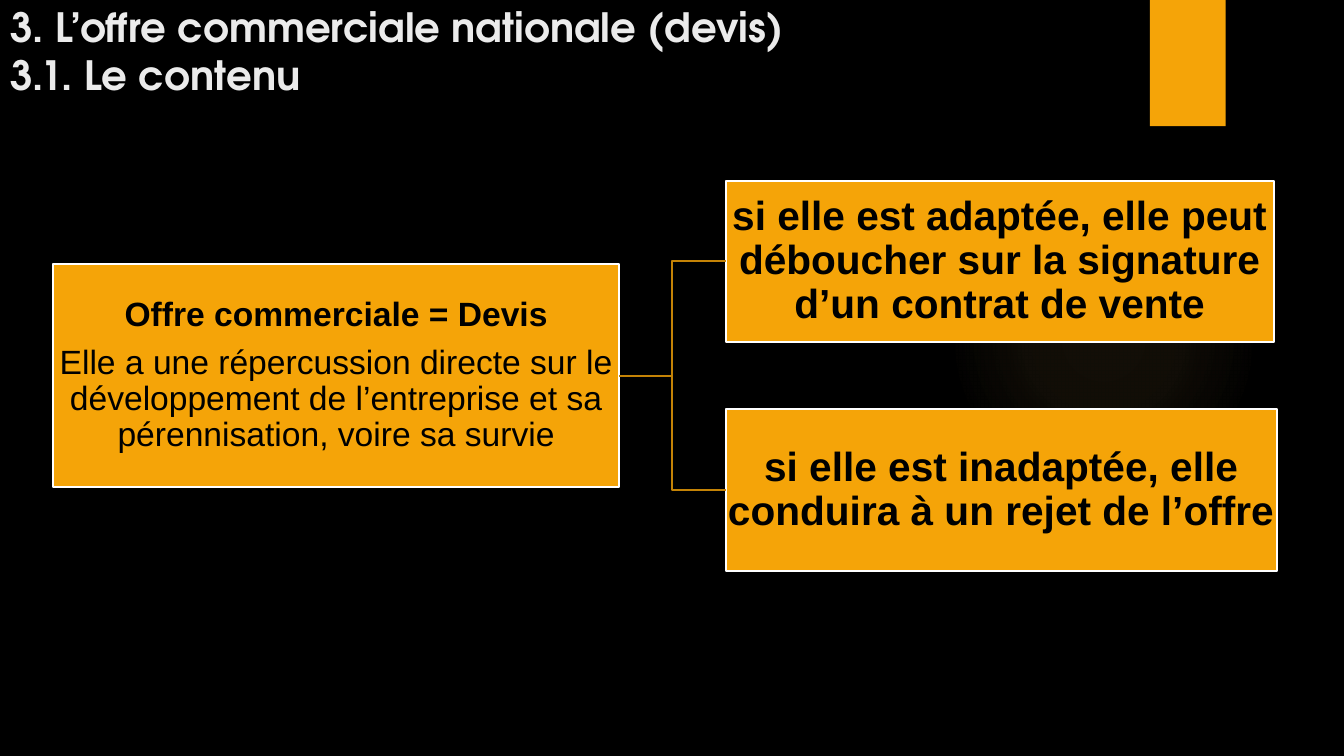
"""Builds the slide on the content of a national commercial offer."""
from lxml.etree import SubElement
from pptx import Presentation
from pptx.dml.color import RGBColor
from pptx.enum.shapes import MSO_CONNECTOR, MSO_SHAPE
from pptx.enum.text import MSO_ANCHOR, MSO_AUTO_SIZE, PP_ALIGN
from pptx.oxml import parse_xml
from pptx.oxml.ns import nsdecls, qn
from pptx.util import Cm, Pt

TITLE = "3. L’offre commerciale nationale (devis)\v3.1. Le contenu"
OFFER = [
    ("Offre commerciale = Devis", True),
    ("Elle a une répercussion directe sur le développement de l’entreprise "
     "et sa pérennisation, voire sa survie", False),
]
OUTCOMES = [
    ("si elle est adaptée, elle peut déboucher sur la signature d’un contrat de vente", 13.82),
    ("si elle est inadaptée, elle conduira à un rejet de l’offre", 13.89),
]
COLORS = {
    "background": "000000",
    "title": "EBEBEB",
    "accent": "F5A408",
    "glow": "FAC96A",
    "branch": "C48306",
    "border": "FFFFFF",
    "text": "000000",
}
GLOW_STOPS = [(0, 7), (36, 6), (69, 0)]
MIDDLE = 9.47
OFFER_LEFT, OFFER_WIDTH, OFFER_HEIGHT = 1.34, 14.26, 5.62
OUTCOME_LEFT, OUTCOME_HEIGHT, OUTCOME_PITCH = 18.29, 4.07, 5.76


def color(name):
    return RGBColor.from_string(COLORS[name])


def format_runs(paragraph, font_name, size, color_name, bold):
    for run in paragraph.runs:
        run.font.name = font_name
        run.font.size = Pt(size)
        run.font.bold = bold
        run.font.color.rgb = color(color_name)


def add_plain_shape(slide, kind, left, top, width, height):
    shape = slide.shapes.add_shape(kind, Cm(left), Cm(top), Cm(width), Cm(height))
    shape.shadow.inherit = False
    shape.fill.solid()
    shape.fill.fore_color.rgb = color("accent")
    shape.line.fill.background()
    return shape


def add_glow(slide):
    glow = add_plain_shape(slide, MSO_SHAPE.OVAL, 23.9, 4.65, 7.82, 7.82)
    stops = "".join(
        f'<a:gs pos="{position * 1000}"><a:srgbClr val="{COLORS["glow"]}">'
        f'<a:alpha val="{alpha * 1000}"/></a:srgbClr></a:gs>'
        for position, alpha in GLOW_STOPS
    )
    gradient = parse_xml(
        f'<a:gradFill {nsdecls("a")}><a:gsLst>{stops}</a:gsLst><a:path path="circle">'
        '<a:fillToRect l="50000" t="50000" r="50000" b="50000"/></a:path></a:gradFill>'
    )
    properties = glow.element.spPr
    properties.replace(properties.find(qn("a:solidFill")), gradient)


def add_title(slide):
    title = slide.shapes.title
    title.left, title.top, title.width, title.height = Cm(0), Cm(0.86), Cm(24.51), Cm(1.75)
    frame = title.text_frame
    frame.text = TITLE
    frame.auto_size = MSO_AUTO_SIZE.NONE
    frame.vertical_anchor = MSO_ANCHOR.BOTTOM
    frame.paragraphs[0].alignment = PP_ALIGN.LEFT
    format_runs(frame.paragraphs[0], "TeX Gyre Adventor", 28.8, "title", True)


def add_box(slide, left, middle, width, height, paragraphs, size):
    box = add_plain_shape(slide, MSO_SHAPE.RECTANGLE, left, middle - height / 2, width, height)
    box.line.color.rgb = color("border")
    box.line.width = Pt(1.5)
    frame = box.text_frame
    frame.word_wrap = True
    frame.vertical_anchor = MSO_ANCHOR.MIDDLE
    frame.margin_left = frame.margin_right = frame.margin_top = frame.margin_bottom = Cm(0.04)
    frame.text = "\n".join(text for text, bold in paragraphs)
    for paragraph, (text, bold) in zip(frame.paragraphs, paragraphs):
        paragraph.alignment = PP_ALIGN.CENTER
        paragraph.line_spacing = 0.9
        format_runs(paragraph, "Arial", size, "text", bold)
    for paragraph in frame.paragraphs[:-1]:
        paragraph.space_after = Pt(0.35 * size)
    return box


def add_branch(slide, parent, child):
    branch = slide.shapes.add_connector(MSO_CONNECTOR.ELBOW, 0, 0, 0, 0)
    branch.begin_connect(parent, 3)
    branch.end_connect(child, 1)
    branch.line.color.rgb = color("branch")
    branch.line.width = Pt(1.5)
    SubElement(branch.element.spPr, qn("a:effectLst"))


def main():
    presentation = Presentation()
    presentation.slide_width, presentation.slide_height = Cm(33.87), Cm(19.05)
    slide = presentation.slides.add_slide(presentation.slide_layouts[5])
    slide.background.fill.solid()
    slide.background.fill.fore_color.rgb = color("background")

    add_glow(slide)
    add_plain_shape(slide, MSO_SHAPE.RECTANGLE, 28.98, 0, 1.91, 3.18)
    add_title(slide)

    offer = add_box(slide, OFFER_LEFT, MIDDLE, OFFER_WIDTH, OFFER_HEIGHT, OFFER, 24)
    for index, (text, width) in enumerate(OUTCOMES):
        middle = MIDDLE + (index - (len(OUTCOMES) - 1) / 2) * OUTCOME_PITCH
        outcome = add_box(slide, OUTCOME_LEFT, middle, width, OUTCOME_HEIGHT, [(text, True)], 29)
        add_branch(slide, offer, outcome)

    presentation.save("out.pptx")


if __name__ == "__main__":
    main()
